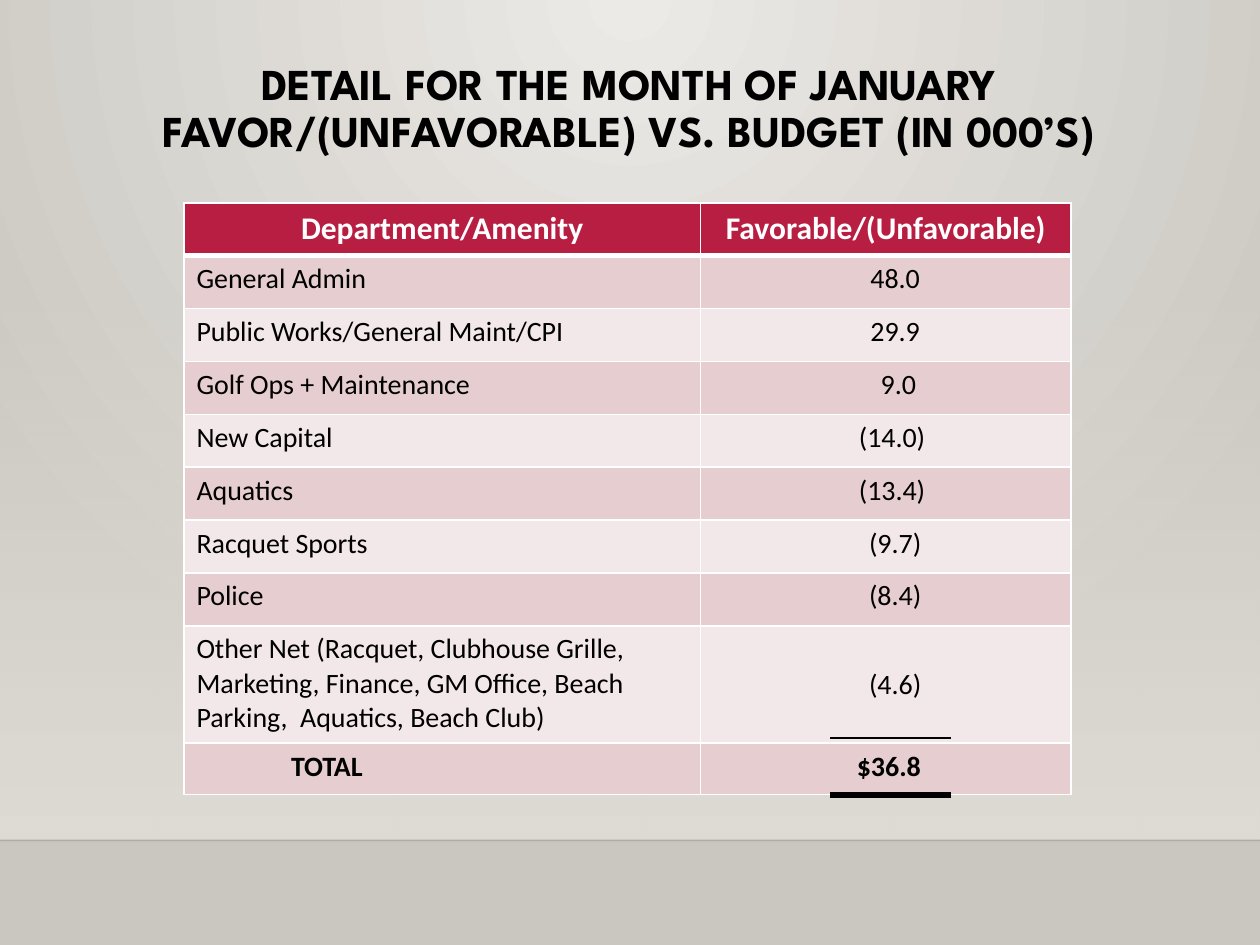
from typing import NamedTuple

from lxml import etree
from pptx import Presentation
from pptx.dml.color import RGBColor
from pptx.enum.shapes import MSO_CONNECTOR, MSO_SHAPE
from pptx.enum.text import MSO_ANCHOR, PP_ALIGN
from pptx.oxml.ns import qn
from pptx.util import Emu, Inches, Pt

BLACK = RGBColor(0x00, 0x00, 0x00)
WHITE = RGBColor(0xFF, 0xFF, 0xFF)
CRIMSON = RGBColor(0xB7, 0x1E, 0x42)
ROSE = RGBColor(0xE6, 0xCD, 0xCF)
BLUSH = RGBColor(0xF3, 0xE8, 0xE9)
WALL_LIGHT = RGBColor(0xEC, 0xEA, 0xE7)
WALL_DARK = RGBColor(0xCA, 0xC7, 0xC1)
HAZE = RGBColor(0xDF, 0xDB, 0xD5)

SLIDE_W, SLIDE_H = Inches(10), Inches(7.5)
GRID_COLS, GRID_ROWS = 100, 75
CELL_MARGIN = 1  # grid columns
SPACE = 0.5  # one step of figure alignment, grid columns


class Entry(NamedTuple):
    department: str
    amount: str
    shift: int  # steps that line the figures up
    rows: float = 4.2


class Rule(NamedTuple):
    left: float
    right: float
    row: float
    weight: float
    color: RGBColor = BLACK
    alpha: int = 100


ENTRIES = [
    Entry("General Admin", "48.0", 3),
    Entry("Public Works/General Maint/CPI", "29.9", 3),
    Entry("Golf Ops + Maintenance", "9.0", 4),
    Entry("New Capital", "(14.0)", 2),
    Entry("Aquatics", "(13.4)", 2),
    Entry("Racquet Sports", "(9.7)", 3),
    Entry("Police", "(8.4)", 3),
    Entry("Other Net (Racquet, Clubhouse Grille, Marketing, Finance, GM Office, "
          "Beach Parking,  Aquatics, Beach Club)", "(4.6)", 3, 9.3),
    Entry("TOTAL", "$36.8", 1, 4.1),
]
HEADER_ROWS = 4.2
TOTAL_SHIFT = 15
TABLE_LEFT, TABLE_TOP = 14.6, 16.1
TABLE_COLS = (41, 29.4)
TABLE_ROWS = [HEADER_ROWS] + [entry.rows for entry in ENTRIES]
TABLE_BOTTOM = TABLE_TOP + sum(TABLE_ROWS)
SHELF_ROW = 66.7


def x(cols: float) -> Emu:
    return Emu(round(SLIDE_W * cols / GRID_COLS))


def y(rows: float) -> Emu:
    return Emu(round(SLIDE_H * rows / GRID_ROWS))


def set_alpha(color_element, percent: int) -> None:
    etree.SubElement(color_element, qn("a:alpha")).set("val", str(percent * 1000))


def set_gradient(fill, first: RGBColor, last: RGBColor) -> None:
    fill.gradient()
    for stop, color in zip(fill.gradient_stops, (first, last)):
        stop.color.rgb = color


def paint_background(slide) -> None:
    set_gradient(slide.background.fill, WALL_LIGHT, WALL_DARK)
    gradient = slide.element.find(".//" + qn("p:bgPr")).find(qn("a:gradFill"))
    linear = gradient.find(qn("a:lin"))
    radial = etree.Element(qn("a:path"), {"path": "circle"})
    etree.SubElement(radial, qn("a:fillToRect"),
                     {"l": "43000", "t": "0", "r": "43000", "b": "100000"})
    gradient.replace(linear, radial)


def add_haze(slide, top: float) -> None:
    haze = slide.shapes.add_shape(MSO_SHAPE.RECTANGLE, 0, y(top), SLIDE_W,
                                  y(SHELF_ROW - top))
    haze.shadow.inherit = False
    haze.line.fill.background()
    set_gradient(haze.fill, HAZE, HAZE)
    haze.fill.gradient_angle = 270
    set_alpha(haze.element.find(".//" + qn("a:srgbClr")), 0)


def add_rule(slide, rule: Rule) -> None:
    line = slide.shapes.add_connector(MSO_CONNECTOR.STRAIGHT, x(rule.left), y(rule.row),
                                      x(rule.right), y(rule.row))
    line.line.color.rgb = rule.color
    line.line.width = Pt(rule.weight)
    properties = line.element.spPr
    if rule.alpha < 100:
        set_alpha(properties.find(".//" + qn("a:srgbClr")), rule.alpha)
    etree.SubElement(properties, qn("a:effectLst"))


def add_title(slide, text: str) -> None:
    frame = slide.shapes.add_textbox(x(8.9), y(0.5), x(82), y(13.4)).text_frame
    frame.word_wrap = True
    frame.vertical_anchor = MSO_ANCHOR.BOTTOM
    frame.margin_bottom = y(1.4)
    frame.text = text
    heading = frame.paragraphs[0]
    heading.alignment = PP_ALIGN.CENTER
    heading.line_spacing = 0.9
    heading.font.name = "League Spartan"
    heading.font.size = Pt(25.2)
    heading.font.bold = True
    heading.font.color.rgb = BLACK


def add_borders(cell, bottom: float) -> None:
    for side, weight in (("L", 1), ("R", 1), ("T", 1), ("B", bottom)):
        border = etree.SubElement(cell._tc.get_or_add_tcPr(), qn(f"a:ln{side}"),
                                  {"w": str(Pt(weight))})
        solid = etree.SubElement(border, qn("a:solidFill"))
        etree.SubElement(solid, qn("a:srgbClr")).set("val", str(WHITE))


def fill_cell(cell, text: str, fill: RGBColor, *, size: float = 16,
              color: RGBColor = BLACK, bold: bool = False, centered: bool = False,
              shift: int = 0, bottom: float = 1) -> None:
    add_borders(cell, bottom)
    cell.fill.solid()
    cell.fill.fore_color.rgb = fill
    cell.margin_left = x(CELL_MARGIN + shift * SPACE)
    cell.text = text
    content = cell.text_frame.paragraphs[0]
    content.alignment = PP_ALIGN.CENTER if centered else PP_ALIGN.LEFT
    content.font.name = "Calibri"
    content.font.size = Pt(size)
    content.font.bold = bold
    content.font.color.rgb = color


def add_variance_table(slide) -> None:
    table = slide.shapes.add_table(len(TABLE_ROWS), len(TABLE_COLS), x(TABLE_LEFT),
                                   y(TABLE_TOP), x(sum(TABLE_COLS)),
                                   y(sum(TABLE_ROWS))).table
    for column, width in zip(table.columns, TABLE_COLS):
        column.width = x(width)
    for row, height in zip(table.rows, TABLE_ROWS):
        row.height = y(height)
    for col, label in enumerate(("Department/Amenity", "Favorable/(Unfavorable)")):
        fill_cell(table.cell(0, col), label, CRIMSON, size=18, color=WHITE,
                  bold=True, centered=True, bottom=3)
    for row, entry in enumerate(ENTRIES, start=1):
        band = ROSE if row % 2 else BLUSH
        total = row == len(ENTRIES)
        fill_cell(table.cell(row, 0), entry.department, band, bold=total,
                  shift=TOTAL_SHIFT if total else 0)
        fill_cell(table.cell(row, 1), entry.amount, band, bold=total,
                  centered=True, shift=entry.shift)
        if entry.rows > HEADER_ROWS:
            table.cell(row, 1).vertical_anchor = MSO_ANCHOR.MIDDLE


def main() -> None:
    deck = Presentation()
    deck.slide_width, deck.slide_height = SLIDE_W, SLIDE_H
    slide = deck.slides.add_slide(deck.slide_layouts[6])

    # Backdrop with its shelf line
    paint_background(slide)
    add_haze(slide, top=22)
    add_rule(slide, Rule(0, GRID_COLS, SHELF_ROW, 1, alpha=20))

    # Heading and figures
    add_title(slide, "DETAIL FOR THE MONTH OF JANUARY\v"
                     "FAVOR/(UNFAVORABLE) VS. BUDGET (IN 000’S)")
    add_variance_table(slide)

    # Rules below and above the total
    add_rule(slide, Rule(65.9, 75.5, TABLE_BOTTOM, 3))
    add_rule(slide, Rule(65.9, 75.5, TABLE_BOTTOM - 4.5, 1.25))

    deck.save("out.pptx")


if __name__ == "__main__":
    main()
